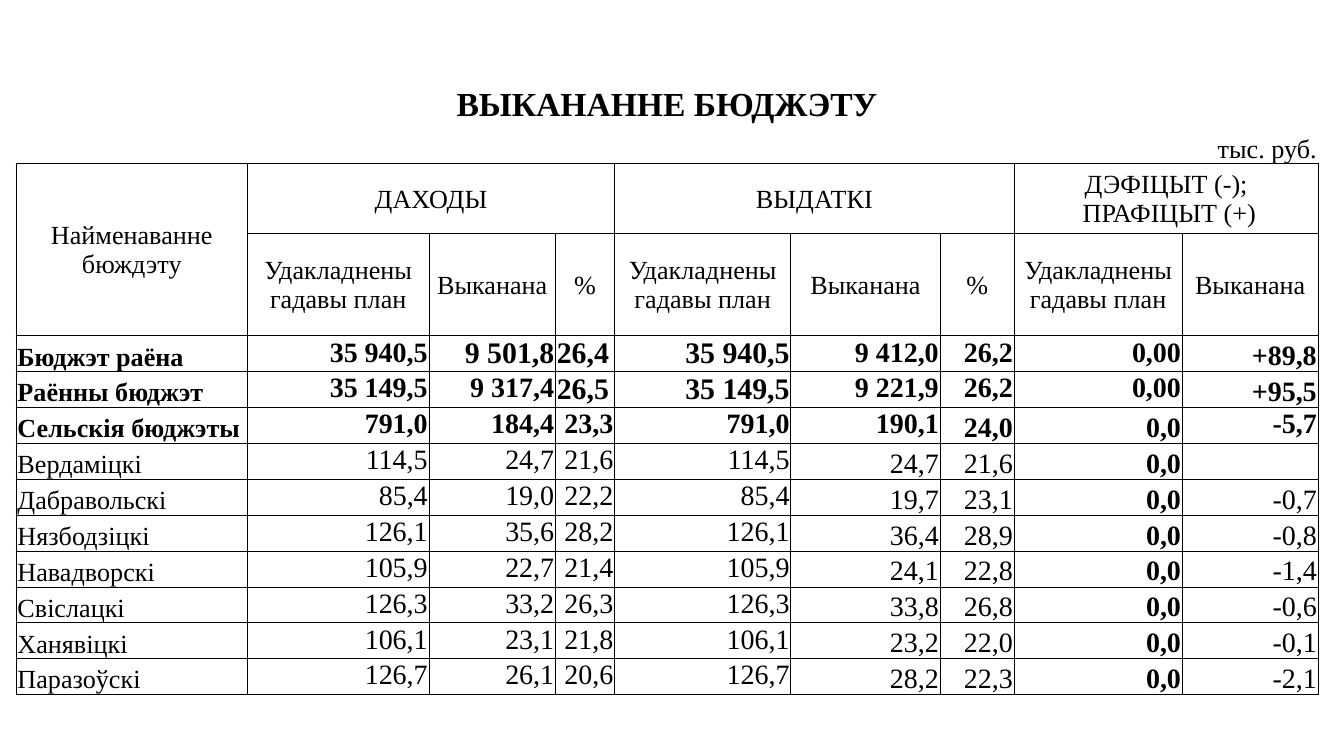
from lxml.etree import SubElement
from pptx import Presentation
from pptx.dml.color import RGBColor
from pptx.enum.text import MSO_ANCHOR, PP_ALIGN
from pptx.oxml.ns import qn
from pptx.util import Inches, Pt

TITLE = "ВЫКАНАННЕ БЮДЖЭТУ"
UNIT = "тыс. руб."
NAME_HEADER = "Найменаванне бюждэту"
PLAN, DONE, PERCENT = "Удакладнены гадавы план", "Выканана", "%"
# heading, first and last grid column
GROUPS = [
    ("ДАХОДЫ", 1, 5),
    ("ВЫДАТКІ", 6, 9),
    ("ДЭФІЦЫТ (-);\n ПРАФІЦЫТ (+)", 10, 12),
]
SUBHEADERS = [PLAN, DONE, PERCENT, PLAN, DONE, PERCENT, PLAN, DONE]
BUDGETS = [
    ("Бюджэт раёна", "35 940,5", "9 501,8", "26,4", "35 940,5", "9 412,0", "26,2", "0,00", "+89,8"),
    ("Раённы бюджэт", "35 149,5", "9 317,4", "26,5", "35 149,5", "9 221,9", "26,2", "0,00", "+95,5"),
    ("Сельскія бюджэты", "791,0", "184,4", "23,3", "791,0", "190,1", "24,0", "0,0", "-5,7"),
    ("Вердаміцкі", "114,5", "24,7", "21,6", "114,5", "24,7", "21,6", "0,0", ""),
    ("Дабравольскі", "85,4", "19,0", "22,2", "85,4", "19,7", "23,1", "0,0", "-0,7"),
    ("Нязбодзіцкі", "126,1", "35,6", "28,2", "126,1", "36,4", "28,9", "0,0", "-0,8"),
    ("Навадворскі", "105,9", "22,7", "21,4", "105,9", "24,1", "22,8", "0,0", "-1,4"),
    ("Свіслацкі", "126,3", "33,2", "26,3", "126,3", "33,8", "26,8", "0,0", "-0,6"),
    ("Ханявіцкі", "106,1", "23,1", "21,8", "106,1", "23,2", "22,0", "0,0", "-0,1"),
    ("Паразоўскі", "126,7", "26,1", "20,6", "126,7", "28,2", "22,3", "0,0", "-2,1"),
]

COLORS = {"ink": "000000"}
FONT = "Times New Roman"
SLIDE_WIDTH = 10
SLIDE_HEIGHT = SLIDE_WIDTH * 9 / 16
LEFT, TOP, WIDTH, HEIGHT = 0.12, 0.61, 9.69, 4.56
COLUMNS = [1.72, 1, 0.35, 0.54, 0.4, 0.44, 1.31, 0.89, 0.22, 0.55, 1.25, 0.12, 0.89]
HEAD_ROWS = [0.34, 0.27, 0.52, 0.76]
ROWS = HEAD_ROWS + [(HEIGHT - sum(HEAD_ROWS)) / len(BUDGETS)] * len(BUDGETS)
TITLE_ROW, UNIT_ROW, GROUP_ROW, SUBHEADER_ROW = range(len(HEAD_ROWS))
# first and last grid column of each data field
FIELDS = [(0, 0), (1, 2), (3, 4), (5, 5), (6, 6), (7, 8), (9, 9), (10, 10), (11, 12)]
UNIT_ROW_MERGES = [(2, 3), (4, 5), (8, 9), (10, 11)]

TOTALS = 3  # the leading budgets are totals, set in bold
LARGE_TOTALS = {(0, 2), (0, 3), (0, 4), (1, 3), (1, 4)}  # (budget, field)
FIRST_BOTTOM_BUDGET = {0: 0, 5: 3, 6: 2, 7: 2, 8: 0}  # by field; the rest stay on top
DEFICIT_PLAN, DEFICIT_DONE = 7, 8


def write(cell, text, size=14, bold=False, align=PP_ALIGN.CENTER, anchor=MSO_ANCHOR.MIDDLE):
    cell.vertical_anchor = anchor
    frame = cell.text_frame
    for index, line in enumerate(text.split("\n")):
        paragraph = frame.add_paragraph() if index else frame.paragraphs[0]
        paragraph.alignment = align
        run = paragraph.add_run()
        run.text = line
        run.font.name = FONT
        run.font.size = Pt(size)
        run.font.bold = bold
        run.font.color.rgb = RGBColor.from_string(COLORS["ink"])


def prepare(cell, sides):
    """Set tight margins, a small empty line, borders on the given sides and no fill."""
    cell.margin_left = cell.margin_right = cell.margin_top = Inches(0.01)
    cell.margin_bottom = 0
    paragraph = cell.text_frame.paragraphs[0]
    SubElement(paragraph._p, qn("a:endParaRPr"), sz="1200")
    properties = cell._tc.get_or_add_tcPr()
    for side in "LRTB":
        line = SubElement(properties, qn(f"a:ln{side}"), w=str(Pt(0.5)))
        if side in sides:
            fill = SubElement(line, qn("a:solidFill"))
            SubElement(fill, qn("a:srgbClr"), val=COLORS["ink"])
        else:
            SubElement(line, qn("a:noFill"))
    cell.fill.background()


def merge(table, row, first, last, last_row=None):
    last_row = row if last_row is None else last_row
    cell = table.cell(row, first)
    if (row, first) != (last_row, last):
        cell.merge(table.cell(last_row, last))
    return cell


def budget_format(budget, field):
    total = budget < TOTALS
    on_bottom = budget >= FIRST_BOTTOM_BUDGET.get(field, len(BUDGETS))
    if (budget, field) == (TOTALS - 1, DEFICIT_DONE):
        on_bottom = False
    size = 14 if field == 0 else 16 if (budget, field) in LARGE_TOTALS else 15
    flush_left = field == 0 or (field == 3 and budget < 2)
    return {
        "size": size,
        "bold": total or field == DEFICIT_PLAN,
        "align": PP_ALIGN.LEFT if flush_left else PP_ALIGN.RIGHT,
        "anchor": MSO_ANCHOR.BOTTOM if on_bottom else MSO_ANCHOR.TOP,
    }


def main():
    deck = Presentation()
    deck.slide_width, deck.slide_height = Inches(SLIDE_WIDTH), Inches(SLIDE_HEIGHT)
    slide = deck.slides.add_slide(deck.slide_layouts[6])
    table = slide.shapes.add_table(
        len(ROWS), len(COLUMNS), Inches(LEFT), Inches(TOP), Inches(WIDTH), Inches(HEIGHT)
    ).table
    table.first_row = table.horz_banding = False
    for column, width in zip(table.columns, COLUMNS):
        column.width = Inches(width * WIDTH / sum(COLUMNS))
    for index, (row, height) in enumerate(zip(table.rows, ROWS)):
        row.height = Inches(height)
        sides = {TITLE_ROW: "", UNIT_ROW: "B"}.get(index, "LRTB")
        for cell in row.cells:
            prepare(cell, sides)

    last_column = len(COLUMNS) - 1
    write(merge(table, TITLE_ROW, 0, last_column), TITLE, size=18, bold=True)
    for first, last in UNIT_ROW_MERGES:
        merge(table, UNIT_ROW, first, last)
    write(table.cell(UNIT_ROW, last_column), UNIT, align=PP_ALIGN.RIGHT, anchor=MSO_ANCHOR.BOTTOM)

    write(merge(table, GROUP_ROW, 0, 0, last_row=SUBHEADER_ROW), NAME_HEADER)
    for heading, first, last in GROUPS:
        write(merge(table, GROUP_ROW, first, last), heading)
    for heading, (first, last) in zip(SUBHEADERS, FIELDS[1:]):
        write(merge(table, SUBHEADER_ROW, first, last), heading)

    for budget, values in enumerate(BUDGETS):
        for field, (value, (first, last)) in enumerate(zip(values, FIELDS)):
            cell = merge(table, len(HEAD_ROWS) + budget, first, last)
            if value:
                write(cell, value, **budget_format(budget, field))

    deck.save("out.pptx")


if __name__ == "__main__":
    main()
